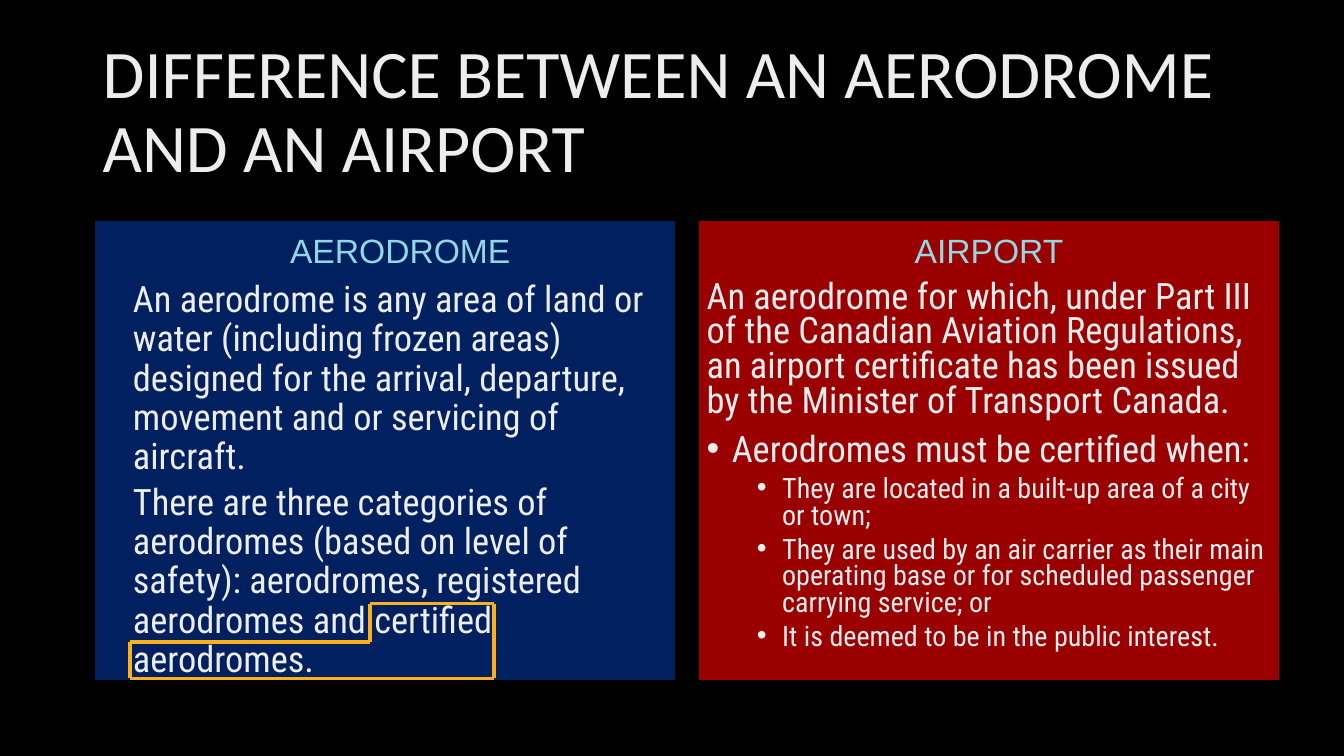
from collections import namedtuple

from lxml import etree
from pptx import Presentation
from pptx.dml.color import RGBColor
from pptx.enum.shapes import MSO_CONNECTOR, MSO_SHAPE
from pptx.enum.text import MSO_ANCHOR, PP_ALIGN
from pptx.oxml.ns import qn
from pptx.util import Inches, Pt

RECTANGLE = MSO_SHAPE.RECTANGLE
STRAIGHT = MSO_CONNECTOR.STRAIGHT
TOP, MIDDLE, BOTTOM = MSO_ANCHOR.TOP, MSO_ANCHOR.MIDDLE, MSO_ANCHOR.BOTTOM
LEFT, CENTER = PP_ALIGN.LEFT, PP_ALIGN.CENTER

Box = namedtuple("Box", "left top width height")

BLACK, NAVY, RED = "000000", "002060", "9A0000"
PALE, AQUA, AMBER = "EDEDED", "94D7E4", "FCB11C"

WIDTH, HEIGHT = 13.33, 7.5
MARGIN = 0.92
PANEL_TOP, PANEL_WIDTH, PANEL_HEIGHT = 2.17, 5.8, 4.6
PANEL_STEP = 5.99
HEADING_RISE, HEADING_HEIGHT = 0.33, 0.9
BODY_DROP = HEADING_HEIGHT - HEADING_RISE
CATEGORIES_DROP = 2.58
BULLET_HANG = 0.25

TITLE = {"name": "Calibri", "size": Pt(48.6)}
HEADING = {"name": "Arial", "size": Pt(24)}
BODY = {"name": "Roboto Condensed", "size": Pt(26)}
DETAIL = {"name": "Roboto Condensed", "size": Pt(20)}

DEFINITION = (
    "An aerodrome is any area of land or water (including frozen areas) designed "
    "for the arrival, departure, movement and or servicing of aircraft."
)
CATEGORIES = (
    "There are three categories of aerodromes (based on level of safety): "
    "aerodromes, registered aerodromes and certified aerodromes."
)
# Each line: text, font format, left indent of its bullet text (0 for none)
AIRPORT_LINES = [
    ("An aerodrome for which, under Part III of the Canadian Aviation Regulations, "
     "an airport certificate has been issued by the Minister of Transport Canada.", BODY, 0),
    ("Aerodromes must be certified when:", BODY, 0.25),
    ("They are located in a built-up area of a city or town;", DETAIL, 0.75),
    ("They are used by an air carrier as their main operating base or for scheduled "
     "passenger carrying service; or", DETAIL, 0.75),
    ("It is deemed to be in the public interest.", DETAIL, 0.75),
]
# Corners of the outline around the words "certified aerodromes."
CERTIFIED_CORNERS = [(1.29, 6.37), (3.67, 6.37), (3.67, 5.99),
                     (4.9, 5.99), (4.9, 6.73), (1.29, 6.73)]


def color(hex_text):
    return RGBColor.from_string(hex_text)


def inches(lengths):
    return [Inches(length) for length in lengths]


def add_bullet(para, indent):
    properties = para._p.get_or_add_pPr()
    properties.set("marL", str(Inches(indent)))
    properties.set("indent", str(-Inches(BULLET_HANG)))
    font = etree.SubElement(properties, qn("a:buFont"))
    font.set("typeface", "Arial")
    etree.SubElement(properties, qn("a:buChar")).set("char", "•")


def add_text(page, box, lines, ink=PALE, anchor=TOP, align=LEFT, spacing=0.9):
    frame = page.shapes.add_textbox(*inches(box)).text_frame
    frame.word_wrap = True
    frame.vertical_anchor = anchor
    for index, (text, style, indent) in enumerate(lines):
        para = frame.add_paragraph() if index else frame.paragraphs[0]
        para.alignment = align
        para.line_spacing = spacing
        if index:
            para.space_before = Pt(5 if style is DETAIL else 10)
        if indent:
            add_bullet(para, indent)
        span = para.add_run()
        span.text = text
        for name, value in style.items():
            setattr(span.font, name, value)
        span.font.color.rgb = color(ink)


def add_panel(page, box, fill, heading, inset=0):
    """Draw a headed panel and return the box left for its body text."""
    panel = page.shapes.add_shape(RECTANGLE, *inches(box))
    panel.shadow.inherit = False
    panel.fill.solid()
    panel.fill.fore_color.rgb = color(fill)
    panel.line.color.rgb = color(BLACK)
    panel.line.width = Pt(3)
    left, width = box.left + inset, box.width - inset
    add_text(page, Box(left, box.top - HEADING_RISE, width, HEADING_HEIGHT),
             [(heading, HEADING, 0)], ink=AQUA, anchor=BOTTOM, align=CENTER)
    return Box(left, box.top + BODY_DROP, width, box.height - BODY_DROP)


def add_aerodrome(page, box):
    body = add_panel(page, box, NAVY, "AERODROME", inset=0.3)
    add_text(page, body._replace(height=2.11), [(DEFINITION, BODY, 0)])
    add_text(page, body._replace(top=box.top + CATEGORIES_DROP, height=2.37),
             [(CATEGORIES, BODY, 0)])


def add_airport(page, box):
    body = add_panel(page, box, RED, "AIRPORT")
    add_text(page, body, AIRPORT_LINES, spacing=0.8)


def add_outline(page, corners):
    for start, end in zip(corners, corners[1:] + corners[:1]):
        edge = page.shapes.add_connector(STRAIGHT, *inches(start + end))
        edge.line.color.rgb = color(AMBER)
        edge.line.width = Pt(2.25)
        etree.SubElement(edge._element.spPr, qn("a:effectLst"))


def main():
    deck = Presentation()
    deck.slide_width, deck.slide_height = inches((WIDTH, HEIGHT))
    page = deck.slides.add_slide(deck.slide_layouts[6])
    page.background.fill.solid()
    page.background.fill.fore_color.rgb = color(BLACK)

    add_text(page, Box(MARGIN, 0.4, 11.5, 1.45),
             [("DIFFERENCE BETWEEN AN AERODROME AND AN AIRPORT", TITLE, 0)], anchor=MIDDLE)
    panel = Box(MARGIN, PANEL_TOP, PANEL_WIDTH, PANEL_HEIGHT)
    add_aerodrome(page, panel)
    add_airport(page, panel._replace(left=MARGIN + PANEL_STEP))
    add_outline(page, CERTIFIED_CORNERS)
    deck.save("out.pptx")


if __name__ == "__main__":
    main()
